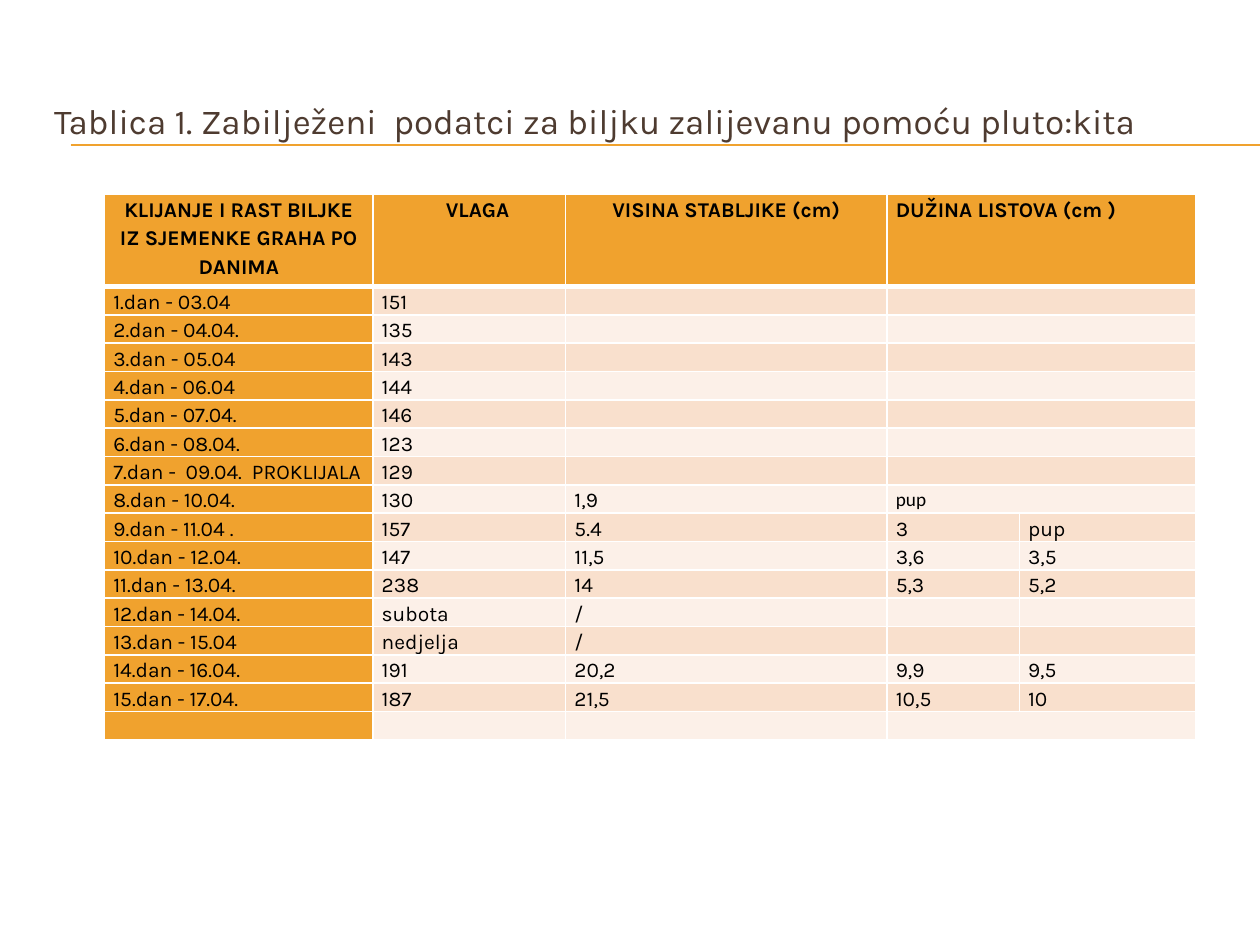
from dataclasses import dataclass

import pptx
import pptx.dml.color
import pptx.enum.shapes
import pptx.enum.text
import pptx.oxml
import pptx.oxml.ns
import pptx.util
from lxml import etree


@dataclass(frozen=True)
class Theme:
    font: str = "Karla"
    plain_font: str = "Calibri"
    amber: str = "F0A22E"
    bands: tuple[str, str] = ("F9E0CD", "FCF0E8")
    border: str = "FFFFFF"
    ink: str = "000000"
    title_ink: str = "4E3B30"
    title_size: float = 20
    size: float = 12
    small_size: float = 11
    rule: float = 0.75
    thin: float = 1
    thick: float = 3


@dataclass(frozen=True)
class Span:
    text: str
    size: float = Theme.size
    font: str = Theme.font
    bold: bool = False
    color: str = Theme.ink


@dataclass(frozen=True)
class Day:
    label: str = ""
    moisture: str = ""
    height: str = ""
    leaves: tuple[Span, ...] = (Span(""),)


THEME = Theme()
WIDTH, HEIGHT = 10, 7.5
GRID = 100
TABLE_LEFT, TABLE_TOP = 8.3, 20.6
COLUMNS = (21.3, 15.3, 25.5, 10.5, 14)
HEADER_ROWS, DAY_ROWS = 9.73, 3
TITLE = "Tablica 1. Zabilježeni  podatci za biljku zalijevanu pomoću pluto:kita"


def leaf_pair(first: str = "", second: str = "") -> tuple[Span, Span]:
    return Span(first), Span(second)


HEADINGS = (
    (Span("KLIJANJE I RAST BILJKE IZ SJEMENKE GRAHA PO DANIMA", bold=True),),
    (Span("VLAGA", bold=True),),
    (Span("VISINA STABLJIKE (cm)", bold=True),),
    (
        Span("DUŽINA LISTOVA", bold=True),
        Span(" ", THEME.small_size, bold=True),
        Span("(cm )", bold=True),
    ),
)
DAYS = (
    Day("1.dan - 03.04", "151"),
    Day("2.dan - 04.04.", "135"),
    Day("3.dan - 05.04", "143"),
    Day("4.dan - 06.04", "144"),
    Day("5.dan - 07.04.", "146"),
    Day("6.dan - 08.04.", "123"),
    Day("7.dan -  09.04.  PROKLIJALA", "129"),
    Day("8.dan - 10.04.", "130", "1,9", (Span("pup", THEME.small_size, THEME.plain_font),)),
    Day("9.dan - 11.04 .", "157", "5.4", leaf_pair("3", "pup")),
    Day("10.dan - 12.04.", "147", "11,5", leaf_pair("3,6", "3,5")),
    Day("11.dan - 13.04.", "238", "14", leaf_pair("5,3", "5,2")),
    Day("12.dan - 14.04.", "subota", "/", leaf_pair()),
    Day("13.dan - 15.04", "nedjelja", "/", leaf_pair()),
    Day("14.dan - 16.04.", "191", "20,2", leaf_pair("9,9", "9,5")),
    Day("15.dan - 17.04.", "187", "21,5", leaf_pair("10,5", "10")),
    Day(),
)


def across(columns: float) -> int:
    return pptx.util.Inches(WIDTH * columns / GRID)


def down(rows: float) -> int:
    return pptx.util.Inches(HEIGHT * rows / GRID)


def rgb(color: str) -> pptx.dml.color.RGBColor:
    return pptx.dml.color.RGBColor.from_string(color)


def write(para, spans: tuple[Span, ...]) -> None:
    for span in spans:
        if not span.text:
            end = etree.SubElement(para._p, pptx.oxml.ns.qn("a:endParaRPr"))
            end.set("sz", str(int(span.size * 100)))
            continue
        run = para.add_run()
        run.text = span.text
        run.font.size = pptx.util.Pt(span.size)
        run.font.name = span.font
        run.font.bold = span.bold
        run.font.color.rgb = rgb(span.color)


def set_borders(cell, top: float, bottom: float) -> None:
    properties = cell._tc.get_or_add_tcPr()
    widths = {"lnL": THEME.thin, "lnR": THEME.thin, "lnT": top, "lnB": bottom}
    for position, (side, width) in enumerate(widths.items()):
        line = pptx.oxml.parse_xml(
            f'<a:{side} {pptx.oxml.ns.nsdecls("a")} w="{pptx.util.Pt(width)}">'
            f'<a:solidFill><a:srgbClr val="{THEME.border}"/></a:solidFill></a:{side}>'
        )
        properties.insert(position, line)


def fill_cell(cell, spans: tuple[Span, ...], color: str, centred: bool = False) -> None:
    cell.margin_left = cell.margin_right = pptx.util.Inches(0.07)
    cell.margin_top = cell.margin_bottom = 0
    cell.fill.solid()
    cell.fill.fore_color.rgb = rgb(color)
    para = cell.text_frame.paragraphs[0]
    para.line_spacing = 1.15
    if centred:
        para.alignment = pptx.enum.text.PP_ALIGN.CENTER
    write(para, spans)


def draw_rule(page, row: float) -> None:
    line = page.shapes.add_connector(
        pptx.enum.shapes.MSO_CONNECTOR.STRAIGHT, across(5.6), down(row), across(GRID), down(row)
    )
    line.line.color.rgb = rgb(THEME.amber)
    line.line.width = pptx.util.Pt(THEME.rule)
    etree.SubElement(line._element.spPr, pptx.oxml.ns.qn("a:effectLst"))


def draw_table(page) -> None:
    frame = page.shapes.add_table(
        len(DAYS) + 1, len(COLUMNS), across(TABLE_LEFT), down(TABLE_TOP),
        across(sum(COLUMNS)), down(HEADER_ROWS + DAY_ROWS * len(DAYS)),
    )
    table = frame.table
    for column, width in zip(table.columns, COLUMNS):
        column.width = across(width)
    for index, row in enumerate(table.rows):
        row.height = down(DAY_ROWS if index else HEADER_ROWS)

    for column, spans in enumerate(HEADINGS):
        fill_cell(table.cell(0, column), spans, THEME.amber, centred=column < 3)
    table.cell(0, 1).margin_left = pptx.util.Inches(0.2)
    table.cell(0, 3).merge(table.cell(0, 4))

    for index, day in enumerate(DAYS, start=1):
        band = THEME.bands[(index - 1) % 2]
        spans = (Span(day.label), Span(day.moisture), Span(day.height), *day.leaves)
        for column, span in enumerate(spans):
            fill_cell(table.cell(index, column), (span,), band if column else THEME.amber)
        if len(day.leaves) == 1:
            table.cell(index, 3).merge(table.cell(index, 4))

    for index, row in enumerate(table.rows):
        for cell in row.cells:
            set_borders(
                cell,
                top=THEME.thick if index == 1 else THEME.thin,
                bottom=THEME.thick if index == 0 else THEME.thin,
            )


def draw_title(page) -> None:
    title = page.shapes.title
    title.left, title.top = across(3.3), down(6.6)
    title.width, title.height = across(95), down(12.27)
    box = title.text_frame
    box.word_wrap = True
    box.auto_size = pptx.enum.text.MSO_AUTO_SIZE.NONE
    box.vertical_anchor = pptx.enum.text.MSO_ANCHOR.MIDDLE
    para = box.paragraphs[0]
    para.alignment = pptx.enum.text.PP_ALIGN.LEFT
    write(para, (Span(TITLE, THEME.title_size, color=THEME.title_ink),))
    page.shapes._spTree.append(title._element)


def main() -> None:
    deck = pptx.Presentation()
    deck.slide_width = pptx.util.Inches(WIDTH)
    deck.slide_height = pptx.util.Inches(HEIGHT)
    page = deck.slides.add_slide(deck.slide_layouts[5])
    for row in (15.35, 15.43):
        draw_rule(page, row)
    draw_table(page)
    draw_title(page)
    deck.save("out.pptx")


if __name__ == "__main__":
    main()
